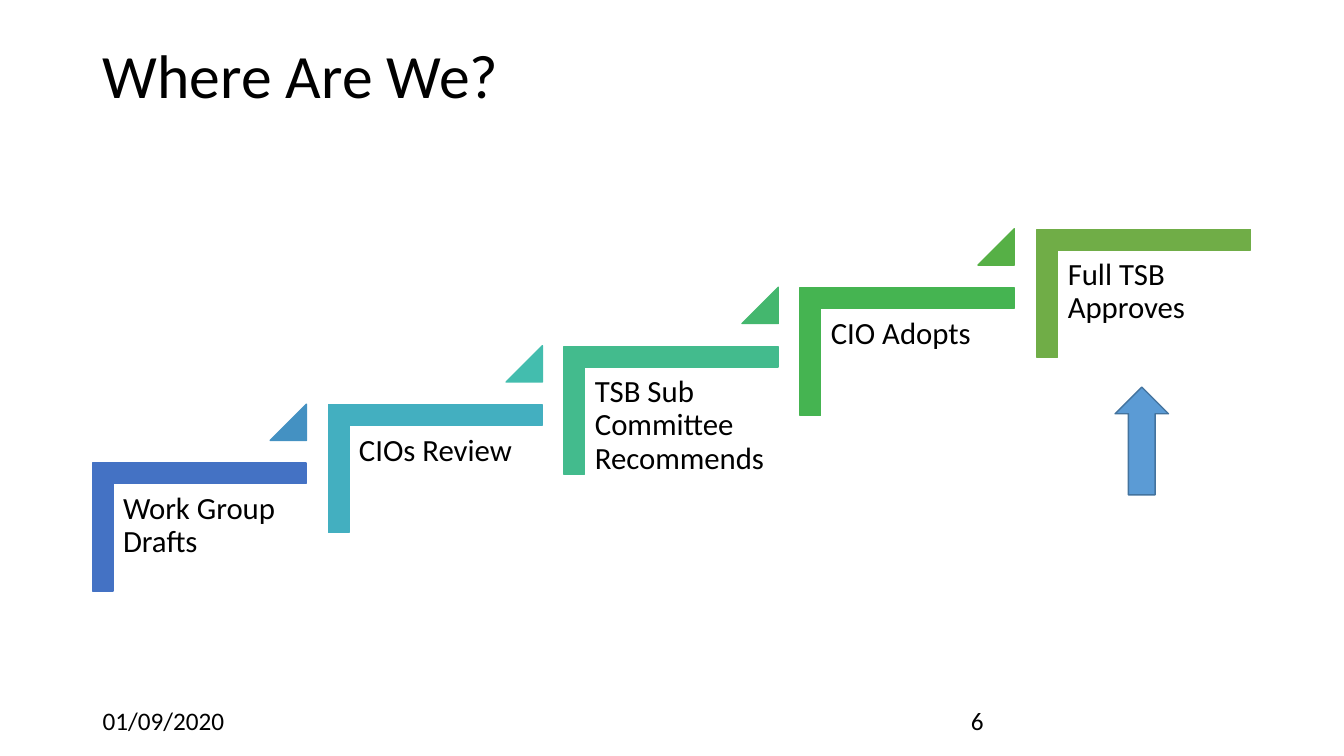
from dataclasses import dataclass

from pptx import Presentation
from pptx.dml.color import RGBColor
from pptx.enum.shapes import MSO_SHAPE as Kind
from pptx.enum.text import MSO_ANCHOR as Anchor, MSO_AUTO_SIZE as Fit, PP_ALIGN as Align
from pptx.util import Emu, Pt

PX = 9144  # EMU per px, 100 px to the inch
FONT = "Calibri"
BLACK = RGBColor(0x00, 0x00, 0x00)
ARROW = RGBColor(0x5B, 0x9B, 0xD5)
EDGE = RGBColor(0x43, 0x73, 0x9E)
BLUE = RGBColor(0x44, 0x72, 0xC4)
SKY = RGBColor(0x44, 0x91, 0xC2)
CYAN = RGBColor(0x43, 0xAF, 0xC0)
TEAL = RGBColor(0x43, 0xBD, 0xAE)
MINT = RGBColor(0x43, 0xBB, 0x8D)
JADE = RGBColor(0x44, 0xB7, 0x6E)
GREEN = RGBColor(0x45, 0xB4, 0x51)
LEAF = RGBColor(0x56, 0xB0, 0x46)
OLIVE = RGBColor(0x70, 0xAD, 0x47)


@dataclass
class Box:
    x: int
    y: int
    w: int
    h: int

    def emu(self) -> list[Emu]:
        return [Emu(n * PX) for n in (self.x, self.y, self.w, self.h)]


@dataclass
class Step:
    label: str
    color: RGBColor
    link: RGBColor | None = None  # triangle leading to the next step


STEPS = [
    Step("Work Group Drafts", BLUE, SKY),
    Step("CIOs Review", CYAN, TEAL),
    Step("TSB Sub Committee Recommends", MINT, JADE),
    Step("CIO Adopts", GREEN, LEAF),
    Step("Full TSB Approves", OLIVE),
]


def put_text(shape, text: str, size: int, anchor=Anchor.TOP, inset: int = 10,
             pad: int = 5, space: float = 1.0) -> None:
    frame = shape.text_frame
    frame.word_wrap = True
    frame.auto_size = Fit.NONE
    frame.vertical_anchor = anchor
    frame.margin_left = frame.margin_right = Emu(inset * PX)
    frame.margin_top = frame.margin_bottom = Emu(pad * PX)
    para = frame.paragraphs[0]
    para.text = text
    para.alignment = Align.LEFT
    para.line_spacing = space
    para.font.name = FONT
    para.font.size = Pt(size)
    para.font.color.rgb = BLACK


def add_text(slide, box: Box, text: str, size: int, **style) -> None:
    put_text(slide.shapes.add_textbox(*box.emu()), text, size, **style)


def add_form(slide, kind: Kind, box: Box, fill: RGBColor, line: RGBColor,
             adj: tuple[float, ...] = (), turn: int = 0) -> None:
    form = slide.shapes.add_shape(kind, *box.emu())
    form.shadow.inherit = False
    form.fill.solid()
    form.fill.fore_color.rgb = fill
    form.line.color.rgb = line
    form.line.width = Pt(1)
    form.rotation = turn
    for i, val in enumerate(adj):
        form.adjustments[i] = val


def add_step(slide, step: Step, i: int) -> None:
    x, y = 134 + 937 * i // 4, 417 - 58 * i
    add_form(slide, Kind.CORNER, Box(x, y, 127, 212), step.color, step.color,
             adj=(0.161, 0.161), turn=90)
    add_text(slide, Box(x - 21, y + 63, 191, 168), step.label, 22,
             inset=9, pad=9, space=0.9)
    if step.link:
        add_form(slide, Kind.ISOSCELES_TRIANGLE, Box(x + 134, y - 16, 36, 36),
                 step.link, step.link, adj=(1,))


def main() -> None:
    deck = Presentation()
    deck.slide_width, deck.slide_height = Emu(1333 * PX), Emu(750 * PX)
    slide = deck.slides.add_slide(deck.slide_layouts[5])

    # Title
    title = slide.shapes.title
    title.left, title.top, title.width, title.height = Box(92, 40, 1150, 145).emu()
    put_text(title, "Where Are We?", 44, space=0.9)

    # Rising steps
    for i, step in enumerate(STEPS):
        add_step(slide, step, i)

    # Current position
    add_form(slide, Kind.UP_ARROW, Box(1106, 384, 53, 107), ARROW, EDGE)

    # Date and page number
    add_text(slide, Box(92, 695, 300, 40), "01/09/2020", 18, anchor=Anchor.MIDDLE)
    add_text(slide, Box(953, 695, 95, 40), "6", 18, anchor=Anchor.MIDDLE)

    deck.save("out.pptx")


if __name__ == "__main__":
    main()
